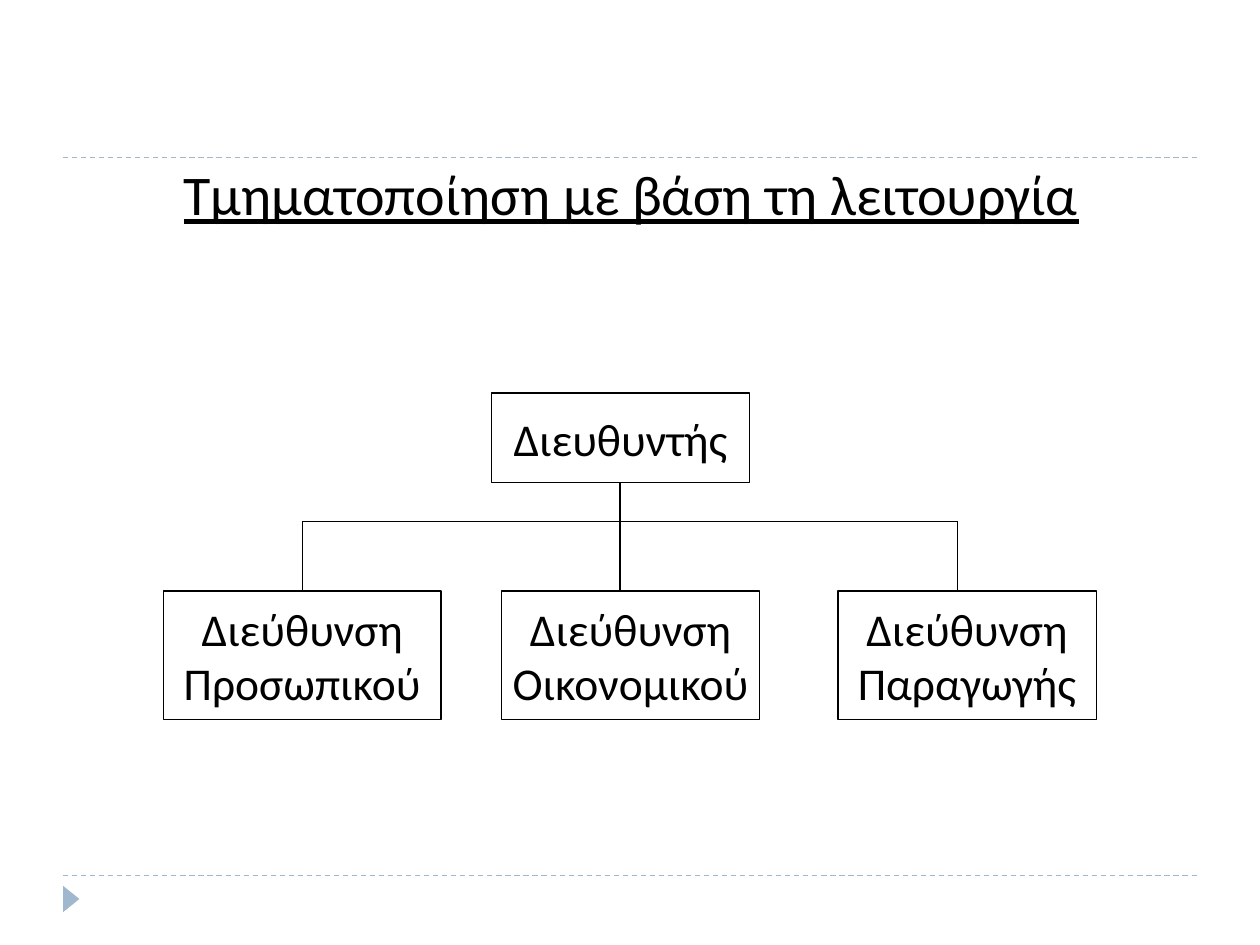
from dataclasses import dataclass

from pptx import Presentation
from pptx import util as u
from pptx.dml.color import RGBColor
from pptx.enum import dml, shapes, text
from pptx.oxml.ns import qn
from lxml import etree


@dataclass(frozen=True)
class Theme:
    ink: RGBColor = RGBColor(0, 0, 0)
    paper: RGBColor = RGBColor(255, 255, 255)
    accent: RGBColor = RGBColor(0x9F, 0xB8, 0xCD)
    font: str = "Calibri"
    title: int = 32
    body: int = 26
    line: float = 0.75


class Deck:
    def __init__(self, theme):
        self.theme = theme
        self.file = Presentation()
        self.file.slide_width = u.Inches(10)
        self.file.slide_height = u.Inches(7.5)
        self.slide = self.file.slides.add_slide(self.file.slide_layouts[6])

    def label(self, frame, words, size, anchor, under=False):
        frame.text = words
        frame.vertical_anchor = anchor
        for para in frame.paragraphs:
            para.alignment = text.PP_ALIGN.CENTER
            for run in para.runs:
                font = run.font
                font.name, font.size = self.theme.font, u.Pt(size)
                font.color.rgb = self.theme.ink
                if under:
                    font.underline = True

    def title(self, words, *area):
        frame = self.slide.shapes.add_textbox(*map(u.Inches, area)).text_frame
        frame.word_wrap = True
        self.label(frame, words, self.theme.title,
                   text.MSO_ANCHOR.BOTTOM, under=True)

    def line(self, x1, y1, x2, y2, color=None, dash=None):
        link = self.slide.shapes.add_connector(
            shapes.MSO_CONNECTOR.STRAIGHT, *map(u.Inches, (x1, y1, x2, y2)))
        link.line.color.rgb = color or self.theme.ink
        link.line.width = u.Pt(self.theme.line)
        if dash:
            link.line.dash_style = dash
        etree.SubElement(link._element.spPr, qn("a:effectLst"))

    def shape(self, kind, area, fill):
        item = self.slide.shapes.add_shape(kind, *map(u.Inches, area))
        item.shadow.inherit = False
        item.fill.solid()
        item.fill.fore_color.rgb = fill
        return item

    def marker(self, *area):
        item = self.shape(shapes.MSO_SHAPE.ISOSCELES_TRIANGLE, area,
                          self.theme.accent)
        item.rotation = 90
        item.line.fill.background()

    def box(self, words, *area):
        item = self.shape(shapes.MSO_SHAPE.RECTANGLE, area, self.theme.paper)
        item.line.color.rgb = self.theme.ink
        item.line.width = u.Pt(self.theme.line)
        item.text_frame.word_wrap = False
        self.label(item.text_frame, words, self.theme.body,
                   text.MSO_ANCHOR.MIDDLE)


def main():
    theme = Theme()
    deck = Deck(theme)
    for y in (6.95, 1.25):
        deck.line(0.5, y, 9.5, y, theme.accent, dml.MSO_LINE.DASH)
    deck.marker(0.46, 7.07, 0.21, 0.13)
    deck.title("Τμηματοποίηση με βάση τη λειτουργία", 0.51, 0.6, 9, 1.25)

    head, bar, row = 3.12, 4.14, 4.69
    tall, wide = 0.71, 2.05
    left, mid, right = 2.4, 4.92, 7.6
    deck.line(mid, head + tall, mid, row)
    deck.line(left, bar, right, bar)
    for x in (left, right):
        deck.line(x, bar, x, row)

    deck.box("Διευθυντής", 3.9, head, wide, tall)
    units = (("Προσωπικού", 1.3, 2.2),
             ("Οικονομικού", 3.98, wide),
             ("Παραγωγής", 6.65, wide))
    for name, x, width in units:
        deck.box(f"Διεύθυνση\n{name}", x, row, width, 1.02)
    deck.file.save("out.pptx")


if __name__ == "__main__":
    main()
